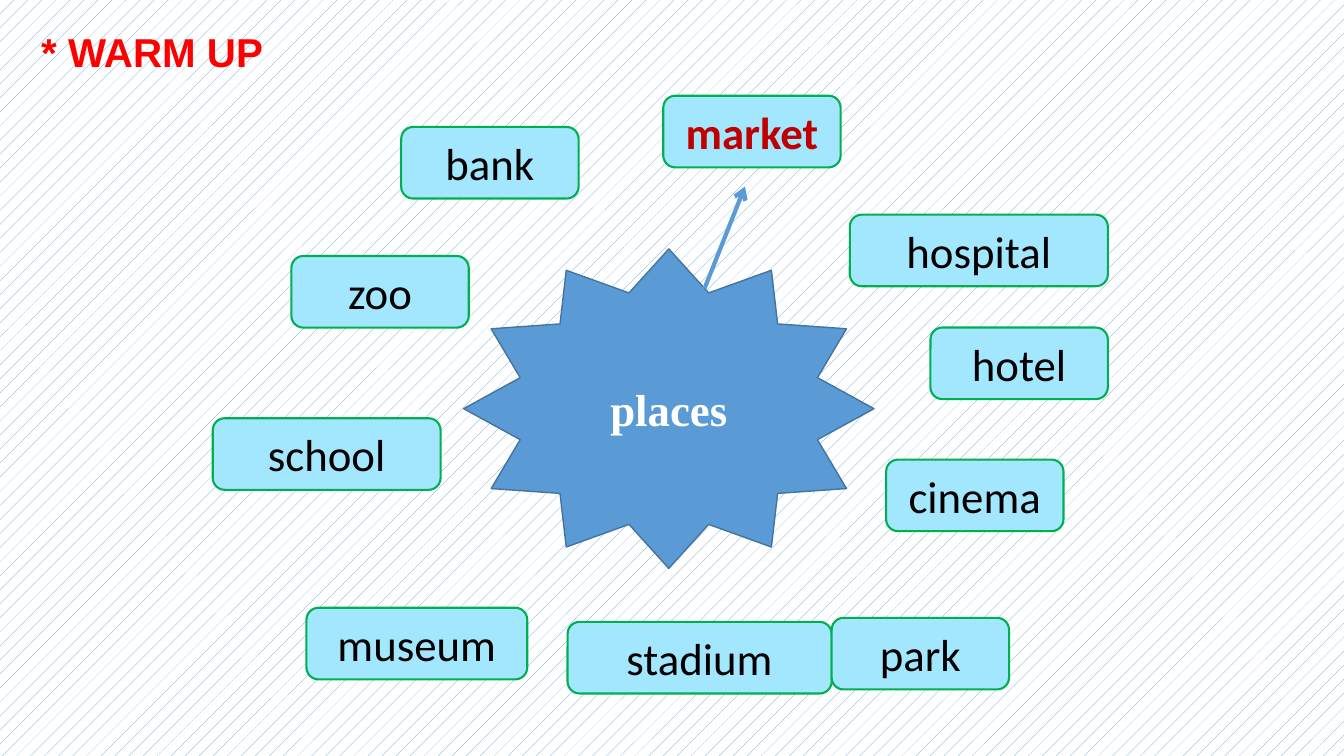
"""Build the warm-up slide: a star of places ringed by word cards."""
from dataclasses import dataclass

from lxml.etree import SubElement
from pptx import Presentation
from pptx.dml.color import RGBColor
from pptx.enum.dml import MSO_PATTERN as Pattern
from pptx.enum.shapes import MSO_CONNECTOR as Link, MSO_SHAPE as Form
from pptx.enum.text import MSO_ANCHOR as Anchor, PP_ALIGN as Align
from pptx.oxml.ns import qn
from pptx.shapes.autoshape import Shape
from pptx.slide import Slide
from pptx.util import Inches, Pt

WIDE, HIGH = Inches(13.33), Inches(7.5)

RED = RGBColor(0xFF, 0x00, 0x00)
DARK = RGBColor(0xC0, 0x00, 0x00)
BLACK = RGBColor(0x00, 0x00, 0x00)
WHITE = RGBColor(0xFF, 0xFF, 0xFF)
SKY = RGBColor(0xA3, 0xE7, 0xFF)
GREEN = RGBColor(0x00, 0xB0, 0x50)
BLUE = RGBColor(0x5B, 0x9B, 0xD5)
NAVY = RGBColor(0x43, 0x73, 0x9E)


@dataclass(frozen=True)
class Box:
    """Place and size as percent of the slide."""
    left: float
    top: float
    width: float = 13.2
    height: float = 9.47


@dataclass(frozen=True)
class Type:
    """Look of a run of text."""
    font: str
    size: float
    color: RGBColor
    bold: bool = False


@dataclass(frozen=True)
class Style:
    """Outline, colours and text look of a shape."""
    form: Form
    fill: RGBColor
    line: RGBColor
    weight: float
    text: Type


@dataclass(frozen=True)
class Card:
    """A word and where it sits."""
    word: str
    box: Box
    key: bool = False


HEAD = Type("Arial", 28.8, RED, True)
PLAIN = Style(Form.ROUNDED_RECTANGLE, SKY, GREEN, 1.5, Type("Calibri", 32, BLACK))
KEY = Style(Form.ROUNDED_RECTANGLE, SKY, GREEN, 1.5, Type("Calibri", 32, DARK, True))
STAR = Style(Form.STAR_12_POINT, BLUE, NAVY, 1, Type("Times New Roman", 32, WHITE, True))

CARDS = [
    Card("hospital", Box(63.23, 28.4, 19.2)),
    Card("cinema", Box(65.93, 60.8)),
    Card("zoo", Box(21.68, 33.87)),
    Card("bank", Box(29.85, 16.8)),
    Card("stadium", Box(42.23, 82.27, 19.65)),
    Card("school", Box(15.83, 55.33, 16.95)),
    Card("museum", Box(22.8, 80.4, 16.43)),
    Card("market", Box(49.35, 12.67), key=True),
    Card("hotel", Box(69.23, 43.33)),
    Card("park", Box(61.88, 81.73)),
]


def across(share: float) -> int:
    """Turn a percent of the slide width into a length."""
    return round(WIDE * share / 100)


def down(share: float) -> int:
    """Turn a percent of the slide height into a length."""
    return round(HIGH * share / 100)


def frame(box: Box) -> tuple[int, int, int, int]:
    """Turn a box into lengths."""
    return across(box.left), down(box.top), across(box.width), down(box.height)


def write(shape: Shape, words: str, kind: Type, align: Align, space: float = 1.0) -> None:
    """Put one run of text in the middle of a shape's height."""
    body = shape.text_frame
    body.word_wrap = True
    body.vertical_anchor = Anchor.MIDDLE
    line = body.paragraphs[0]
    line.alignment = align
    line.line_spacing = space
    run = line.add_run()
    run.text = words
    font = run.font
    font.name, font.size, font.bold = kind.font, Pt(kind.size), kind.bold
    font.color.rgb = kind.color


def draw(slide: Slide, words: str, box: Box, style: Style) -> None:
    """Add a filled shape with a centred word."""
    shape = slide.shapes.add_shape(style.form, *frame(box))
    shape.shadow.inherit = False
    shape.fill.solid()
    shape.fill.fore_color.rgb = style.fill
    shape.line.color.rgb = style.line
    shape.line.width = Pt(style.weight)
    write(shape, words, style.text, Align.CENTER)


def point(slide: Slide, start: tuple[float, float], end: tuple[float, float]) -> None:
    """Add an arrow between two points."""
    arrow = slide.shapes.add_connector(
        Link.STRAIGHT, across(start[0]), down(start[1]), across(end[0]), down(end[1]))
    arrow.line.color.rgb = BLUE
    arrow.line.width = Pt(3)
    SubElement(arrow.line._get_or_add_ln(), qn("a:tailEnd"), type="arrow")
    SubElement(arrow._element.spPr, qn("a:effectLst"))


def paint(slide: Slide) -> None:
    """Give the slide its dotted ground."""
    fill = slide.background.fill
    fill.patterned()
    fill.pattern = Pattern.PERCENT_5
    fill.fore_color.rgb = BLUE
    fill.back_color.rgb = WHITE


def main() -> None:
    """Build and save the slide."""
    deck = Presentation()
    deck.slide_width, deck.slide_height = WIDE, HIGH
    slide = deck.slides.add_slide(deck.slide_layouts[6])
    paint(slide)
    title = slide.shapes.add_textbox(*frame(Box(2.33, 2, 21.9, 10.4)))
    write(title, "* WARM UP", HEAD, Align.LEFT, 0.9)
    for card in CARDS:
        draw(slide, card.word, card.box, KEY if card.key else PLAIN)
    draw(slide, "places", Box(34.5, 32.93, 30.53, 42.27), STAR)
    point(slide, (52.43, 38.13), (55.43, 24.67))
    deck.save("out.pptx")


if __name__ == "__main__":
    main()
